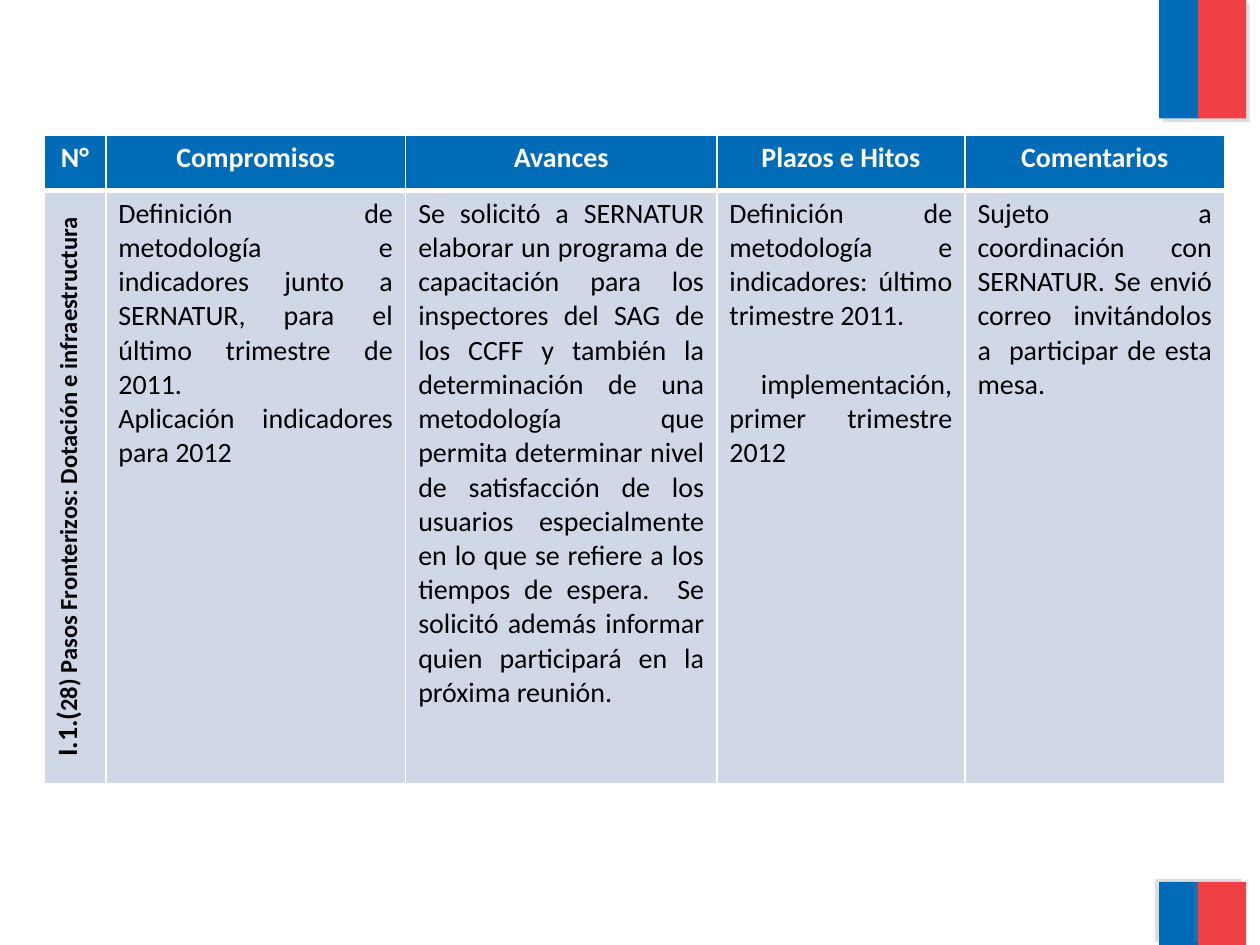
from lxml import etree
from pptx import Presentation
from pptx.dml.color import RGBColor as Rgb
from pptx.enum.shapes import MSO_SHAPE as Shape
from pptx.enum.text import PP_ALIGN as Align
from pptx.oxml import parse_xml
from pptx.oxml.ns import nsdecls, qn
from pptx.util import Inches, Pt

COLORS = {"blue": "006CB7", "red": "EF4144", "pale": "D0D8E8",
          "white": "FFFFFF", "black": "000000", "shadow": "808080"}
FONT = "Calibri"
COLUMN_WIDTHS = [0.49, 2.38, 2.47, 1.97, 2.06]
ROW_HEIGHTS = [0.44, 4.71]
HEADERS = ["N°", "Compromisos", "Avances", "Plazos e Hitos", "Comentarios"]
TOPIC = [("I.1.(", 16), ("28) Pasos Fronterizos: Dotación e infraestructura", 14)]
BODY = [
    ["Definición de metodología e indicadores junto a SERNATUR, para el último trimestre de 2011. ",
     "Aplicación indicadores para 2012"],
    ["Se solicitó a SERNATUR elaborar un programa de capacitación para los inspectores del SAG "
     "de los CCFF y también la determinación de una metodología que permita determinar nivel de "
     "satisfacción de los usuarios especialmente en lo que se refiere a los tiempos de espera.  "
     "Se solicitó además informar quien participará en la próxima reunión."],
    ["Definición de metodología e indicadores: último trimestre 2011.",
     "implementación, primer trimestre 2012"],
    ["Sujeto a coordinación con SERNATUR. Se envió correo invitándolos a  participar de esta mesa."],
]


def write(paragraph, text, size=16, color="black", bold=False, align=Align.JUSTIFY):
    """Add one formatted run to a paragraph."""
    paragraph.alignment = align
    run = paragraph.add_run()
    run.text = text
    font = run.font
    font.name, font.size, font.bold = FONT, Pt(size), bold
    font.color.rgb = Rgb.from_string(COLORS[color])


class SlideBuilder:
    """Hold the colours and the current slide, and draw its elements."""

    def __init__(self, slide, colors):
        self.slide = slide
        self.colors = colors

    def bar(self, left, top, width, height, color, shadow_angle):
        """Draw a flag bar with a hard offset shadow."""
        shape = self.slide.shapes.add_shape(
            Shape.RECTANGLE, Inches(left), Inches(top), Inches(width), Inches(height))
        shape.fill.solid()
        shape.fill.fore_color.rgb = Rgb.from_string(self.colors[color])
        shape.line.fill.background()
        shape.shadow.inherit = False
        effects = shape._element.spPr.find(qn("a:effectLst"))
        effects.append(parse_xml(
            f'<a:outerShdw {nsdecls("a")} blurRad="0" dist="{Pt(3)}" '
            f'dir="{shadow_angle * 60000}" algn="ctr" rotWithShape="0">'
            f'<a:srgbClr val="{self.colors["shadow"]}"><a:alpha val="25000"/></a:srgbClr>'
            '</a:outerShdw>'))

    def table(self, left, top, widths, heights):
        """Add a table with the given column widths and row heights."""
        table = self.slide.shapes.add_table(
            len(heights), len(widths), Inches(left), Inches(top),
            Inches(sum(widths)), Inches(sum(heights))).table
        for column, width in zip(table.columns, widths):
            column.width = Inches(width)
        for row, height in zip(table.rows, heights):
            row.height = Inches(height)
        return table

    def cell(self, cell, fill, top=1, bottom=1):
        """Fill a cell, draw its borders and return its first paragraph."""
        cell.fill.solid()
        cell.fill.fore_color.rgb = Rgb.from_string(self.colors[fill])
        properties = cell._tc.get_or_add_tcPr()
        borders = {"lnL": 1, "lnR": 1, "lnT": top, "lnB": bottom}
        for index, (tag, width) in enumerate(borders.items()):
            line = etree.Element(qn(f"a:{tag}"), w=str(Pt(width)))
            solid = etree.SubElement(line, qn("a:solidFill"))
            etree.SubElement(solid, qn("a:srgbClr"), val=self.colors["white"])
            properties.insert(index, line)
        return cell.text_frame.paragraphs[0]


def main():
    """Build and save the commitments slide."""
    presentation = Presentation()
    presentation.slide_width, presentation.slide_height = Inches(10), Inches(7.5)
    slide = presentation.slides.add_slide(presentation.slide_layouts[6])
    builder = SlideBuilder(slide, COLORS)

    for top, height, angle in [(0, 0.94, 45), (7, 0.5, 215)]:
        builder.bar(9.2, top, 0.31, height, "blue", angle)
        builder.bar(9.51, top, 0.38, height, "red", angle)

    table = builder.table(0.35, 1.07, COLUMN_WIDTHS, ROW_HEIGHTS)
    for column, header in enumerate(HEADERS):
        paragraph = builder.cell(table.cell(0, column), "blue", bottom=3)
        write(paragraph, header, color="white", bold=True, align=Align.CENTER)

    topic_cell = table.cell(1, 0)
    paragraph = builder.cell(topic_cell, "pale", top=3)
    topic_cell._tc.get_or_add_tcPr().set("vert", "vert270")
    for text, size in TOPIC:
        write(paragraph, text, size=size, bold=True, align=Align.CENTER)

    for column, texts in enumerate(BODY, start=1):
        cell = table.cell(1, column)
        paragraph = builder.cell(cell, "pale", top=3)
        write(paragraph, texts[0])
        for text in texts[1:]:
            write(cell.text_frame.add_paragraph(), text)

    milestone = table.cell(1, 3).text_frame.paragraphs[1]
    milestone.space_before = Pt(19.5)
    milestone._p.get_or_add_pPr().set("indent", str(Inches(0.25)))

    presentation.save("out.pptx")


if __name__ == "__main__":
    main()
